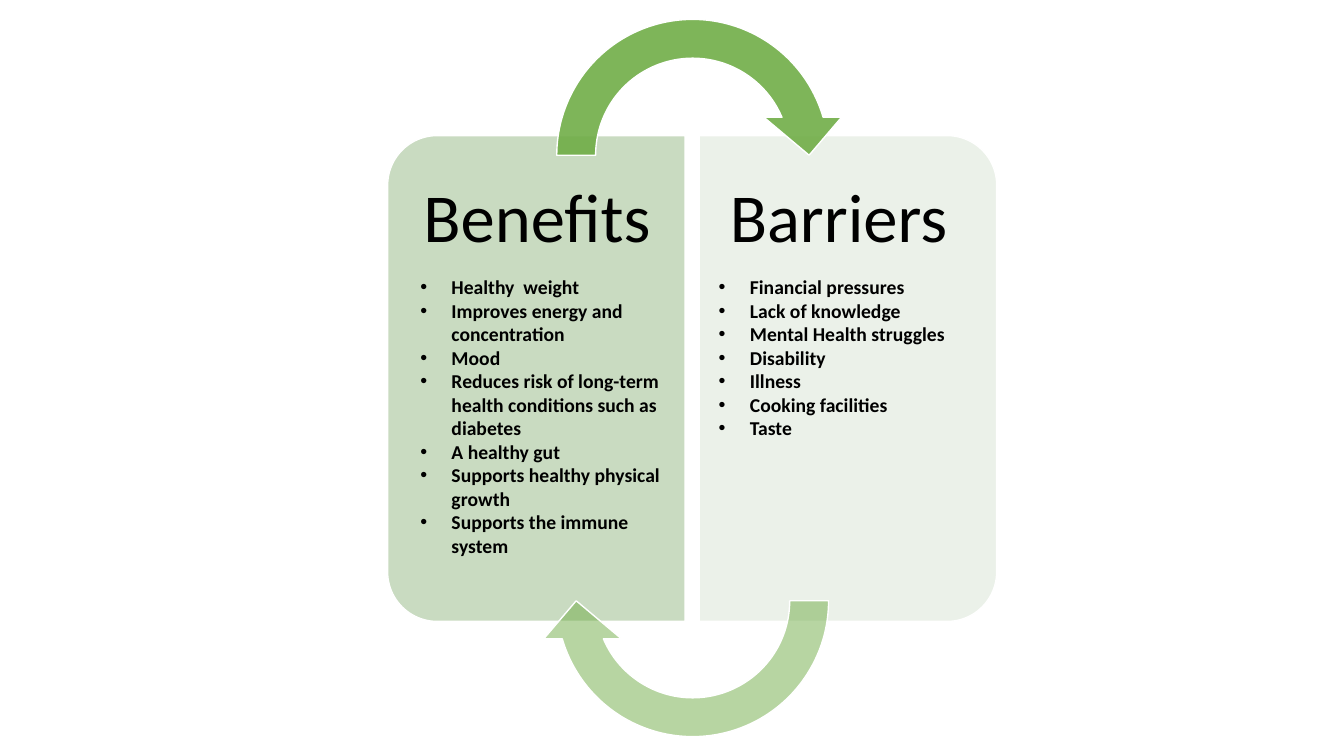
from lxml import etree
from pptx import Presentation
from pptx.dml.color import RGBColor
from pptx.enum.shapes import MSO_SHAPE
from pptx.enum.text import MSO_ANCHOR, MSO_AUTO_SIZE, PP_ALIGN
from pptx.oxml.ns import qn
from pptx.util import Pt

PX = 9144  # EMU per px, 100 px to the inch
BLANK_LAYOUT = 6
HALF_ROUNDED = MSO_SHAPE.ROUND_2_SAME_RECTANGLE
CURVED_ARROW = MSO_SHAPE.CIRCULAR_ARROW
TOP, LEFT = MSO_ANCHOR.TOP, PP_ALIGN.LEFT
GROW = MSO_AUTO_SIZE.SHAPE_TO_FIT_TEXT

SAGE = RGBColor(0xC9, 0xDB, 0xC1)
MIST = RGBColor(0xEB, 0xF1, 0xE9)
GREEN = RGBColor(0x70, 0xAD, 0x47)
WHITE = RGBColor(0xFF, 0xFF, 0xFF)
BLACK = RGBColor(0x00, 0x00, 0x00)

ARROW_ADJUSTMENTS = (0.125, 11.423, 204.577, 108, 0.125)
BENEFITS = (
    "Healthy  weight",
    "Improves energy and concentration",
    "Mood",
    "Reduces risk of long-term health conditions such as diabetes",
    "A healthy gut",
    "Supports healthy physical growth",
    "Supports the immune system",
)
BARRIERS = (
    "Financial pressures",
    "Lack of knowledge",
    "Mental Health struggles",
    "Disability",
    "Illness",
    "Cooking facilities",
    "Taste",
)


class Board:
    font = "Calibri"
    bullet_indent = 31

    def __init__(self, slide):
        self.slide = slide

    def shape(self, kind, box, fill, rotation):
        shape = self.slide.shapes.add_shape(kind, *(n * PX for n in box))
        shape.shadow.inherit = False
        shape.rotation = rotation
        shape.fill.solid()
        shape.fill.fore_color.rgb = fill
        shape.line.color.rgb = WHITE
        shape.line.width = Pt(1)
        return shape

    def panel(self, box, fill, rotation):
        self.shape(HALF_ROUNDED, box, fill, rotation)

    def arrow(self, box, opacity, rotation):
        arrow = self.shape(CURVED_ARROW, box, GREEN, rotation)
        for index, value in enumerate(ARROW_ADJUSTMENTS):
            arrow.adjustments[index] = value
        color = arrow.fill._xPr.find(qn("a:solidFill"))[0]
        etree.SubElement(color, qn("a:alpha"), val=str(opacity * 1000))

    def text_frame(self, box):
        frame = self.slide.shapes.add_textbox(*(n * PX for n in box)).text_frame
        frame.word_wrap = True
        frame.vertical_anchor = TOP
        return frame

    def style(self, paragraph, size, bold=False):
        paragraph.alignment = LEFT
        paragraph.font.name = self.font
        paragraph.font.size = Pt(size)
        paragraph.font.bold = bold
        paragraph.font.color.rgb = BLACK

    def heading(self, text, box, left_inset, right_inset):
        frame = self.text_frame(box)
        frame.margin_left, frame.margin_right = left_inset * PX, right_inset * PX
        frame.margin_top = frame.margin_bottom = 34 * PX
        paragraph = frame.paragraphs[0]
        paragraph.text = text
        paragraph.line_spacing = 0.9
        self.style(paragraph, 49)

    def bullets(self, items, box):
        frame = self.text_frame(box)
        frame.auto_size = GROW
        frame.text = "\n".join(items)
        for paragraph in frame.paragraphs:
            properties = paragraph._p.get_or_add_pPr()
            properties.set("marL", str(self.bullet_indent * PX))
            properties.set("indent", str(-self.bullet_indent * PX))
            etree.SubElement(properties, qn("a:buFont"), typeface="Arial")
            etree.SubElement(properties, qn("a:buChar"), char="•")
            self.style(paragraph, 14, bold=True)


def main():
    presentation = Presentation()
    presentation.slide_width, presentation.slide_height = 1333 * PX, 750 * PX
    layout = presentation.slide_layouts[BLANK_LAYOUT]
    board = Board(presentation.slides.add_slide(layout))

    # Two panels, rounded on their outer sides, with headings
    board.panel((291, 228, 482, 295), SAGE, 270)
    board.heading("Benefits", (400, 148, 280, 453), 20, 31)
    board.panel((600, 228, 482, 295), MIST, 90)
    board.heading("Barriers", (693, 148, 280, 453), 31, 20)

    # Arrows circling between the panels
    board.arrow((533, 0, 308, 308), 90, 0)
    board.arrow((533, 442, 308, 308), 50, 180)

    # Lists
    board.bullets(BENEFITS, (407, 268, 260, 316))
    board.bullets(BARRIERS, (703, 268, 260, 222))

    presentation.save("out.pptx")


if __name__ == "__main__":
    main()
